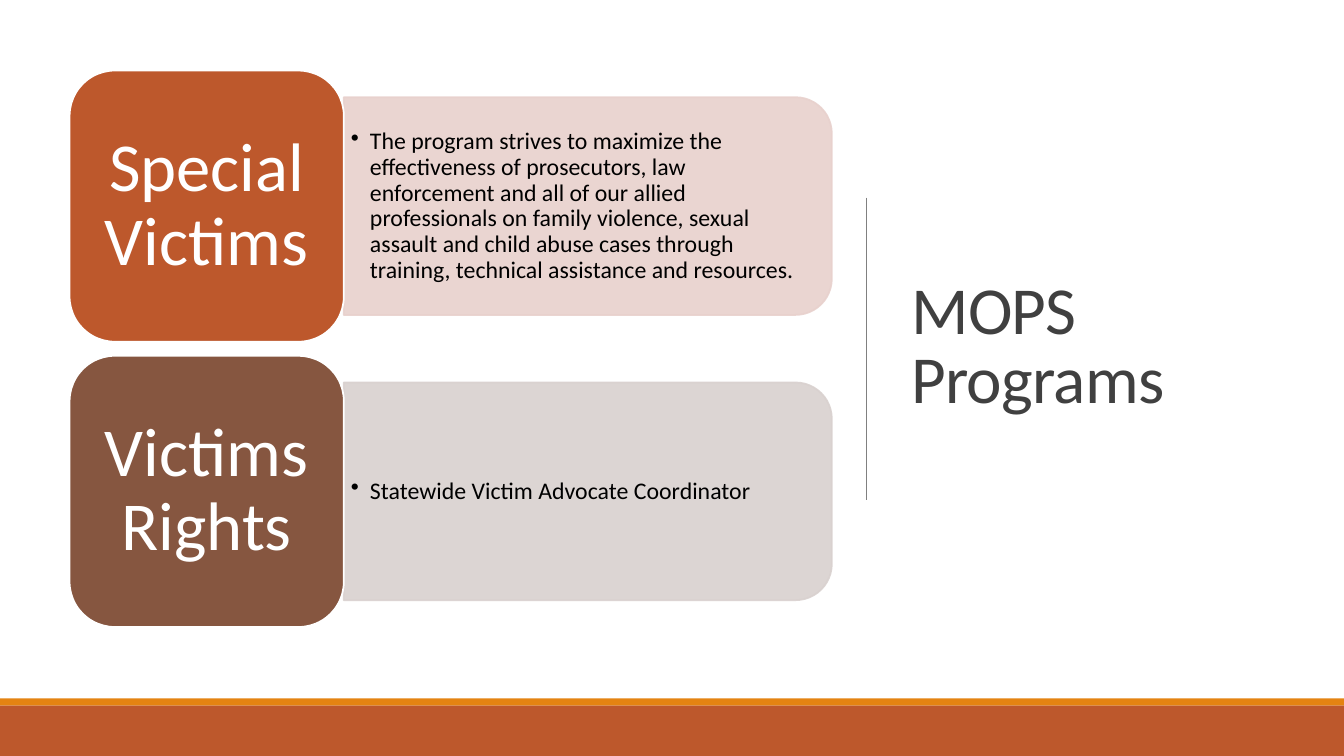
from dataclasses import dataclass

from lxml.etree import SubElement
from pptx import Presentation
from pptx.dml.color import RGBColor
from pptx.enum.shapes import MSO_CONNECTOR, MSO_SHAPE
from pptx.enum.text import MSO_ANCHOR, PP_ALIGN
from pptx.oxml.ns import qn
from pptx.util import Inches, Pt


@dataclass(frozen=True)
class Theme:
    """Colours, font and type sizes of the slide."""

    font: str = "Calibri"
    rust: str = "BD582C"
    orange: str = "E48312"
    brown: str = "865640"
    pink: str = "E8D1CD"
    taupe: str = "D9D1CF"
    rule: str = "808080"
    heading: str = "404040"
    white: str = "FFFFFF"
    black: str = "000000"
    title_size: float = 48
    label_size: float = 49
    detail_size: float = 17
    outline: float = 1.25


THEME = Theme()

PROGRAMS = [
    ("Special Victims", THEME.rust, THEME.pink,
     "The program strives to maximize the effectiveness of prosecutors, law "
     "enforcement and all of our allied professionals on family violence, sexual "
     "assault and child abuse cases through training, technical assistance and "
     "resources."),
    ("Victims Rights", THEME.brown, THEME.taupe,
     "Statewide Victim Advocate Coordinator"),
]
FIRST_TOP, ROW_PITCH = 0.7, 2.83
TILE_LEFT, TILE_WIDTH, TILE_HEIGHT = 0.69, 2.72, 2.69
PANEL_LEFT, PANEL_WIDTH, PANEL_HEIGHT = TILE_LEFT + TILE_WIDTH, 4.84, 2.16
DETAIL_WIDTH, DETAIL_HEIGHT = 4.73, 1.95


def add_block(slide, preset, box, fill, outline=None):
    """Add a filled preset shape, outlined only when a colour is given."""
    block = slide.shapes.add_shape(preset, *map(Inches, box))
    block.shadow.inherit = False
    block.fill.solid()
    block.fill.fore_color.rgb = RGBColor.from_string(fill)
    if outline:
        block.line.color.rgb = RGBColor.from_string(outline)
        block.line.width = Pt(THEME.outline)
    else:
        block.line.fill.background()
    return block


def write(holder, text, size, color, spacing, insets=(0.1, 0.05), align=PP_ALIGN.LEFT):
    """Write one middle-anchored paragraph and return it."""
    frame = holder.text_frame
    frame.word_wrap = True
    frame.vertical_anchor = MSO_ANCHOR.MIDDLE
    frame.margin_left = frame.margin_right = Inches(insets[0])
    frame.margin_top = frame.margin_bottom = Inches(insets[1])
    paragraph = frame.paragraphs[0]
    paragraph.text = text
    paragraph.alignment = align
    paragraph.line_spacing = spacing
    font = paragraph.runs[0].font
    font.name, font.size = THEME.font, Pt(size)
    font.color.rgb = RGBColor.from_string(color)
    return paragraph


def add_bullet(paragraph, indent):
    """Give a paragraph a hanging round bullet."""
    properties = paragraph._p.get_or_add_pPr()
    properties.set("marL", str(Inches(indent)))
    properties.set("indent", str(-Inches(indent)))
    SubElement(properties, qn("a:buChar")).set("char", "•")


def set_opacity(color_parent, percent):
    """Set the opacity of every colour below an element."""
    for color in color_parent.iter(qn("a:srgbClr")):
        SubElement(color, qn("a:alpha")).set("val", str(percent * 1000))


def add_panel(slide, middle, tint, detail):
    """Add the tinted panel, rounded on its right, and its bulleted text."""
    center = PANEL_LEFT + PANEL_WIDTH / 2
    box = (center - PANEL_HEIGHT / 2, middle - PANEL_WIDTH / 2, PANEL_HEIGHT, PANEL_WIDTH)
    panel = add_block(slide, MSO_SHAPE.ROUND_2_SAME_RECTANGLE, box, tint, tint)
    panel.rotation = 90
    set_opacity(panel._element.spPr, 90)
    text_box = (PANEL_LEFT, middle - DETAIL_HEIGHT / 2, DETAIL_WIDTH, DETAIL_HEIGHT)
    description = slide.shapes.add_textbox(*map(Inches, text_box))
    paragraph = write(description, detail, THEME.detail_size, THEME.black, 0.9, (0.07, 0.04))
    add_bullet(paragraph, 0.19)


def add_program(slide, top, label, fill, tint, detail):
    """Add one program row: a panel and the labelled tile beside it."""
    add_panel(slide, top + TILE_HEIGHT / 2, tint, detail)
    box = (TILE_LEFT, top, TILE_WIDTH, TILE_HEIGHT)
    tile = add_block(slide, MSO_SHAPE.ROUNDED_RECTANGLE, box, fill, THEME.white)
    write(tile, label, THEME.label_size, THEME.white, 0.9, (0.2, 0.1), PP_ALIGN.CENTER)


def add_title(slide):
    """Add the slide title."""
    title = slide.shapes.add_textbox(*map(Inches, (8.94, 0.69, 3.69, 5.53)))
    paragraph = write(title, "MOPS Programs", THEME.title_size, THEME.heading, 0.85)
    paragraph.runs[0].font._element.set("spc", "-50")


def add_divider(slide):
    """Add the thin vertical rule left of the title."""
    ends = map(Inches, (8.59, 1.96, 8.59, 4.96))
    divider = slide.shapes.add_connector(MSO_CONNECTOR.STRAIGHT, *ends)
    divider.line.color.rgb = RGBColor.from_string(THEME.rule)
    divider.line.width = Pt(0.5)
    SubElement(divider._element.spPr, qn("a:effectLst"))


def main():
    """Build the slide and save it."""
    deck = Presentation()
    deck.slide_width, deck.slide_height = Inches(13.33), Inches(7.5)
    slide = deck.slides.add_slide(deck.slide_layouts[6])
    add_title(slide)
    add_divider(slide)
    for top, height, color in ((6.93, 0.07, THEME.orange), (7, 0.5, THEME.rust)):
        add_block(slide, MSO_SHAPE.RECTANGLE, (0, top, 13.33, height), color)
    for row, program in enumerate(PROGRAMS):
        add_program(slide, FIRST_TOP + row * ROW_PITCH, *program)
    deck.save("out.pptx")


if __name__ == "__main__":
    main()
